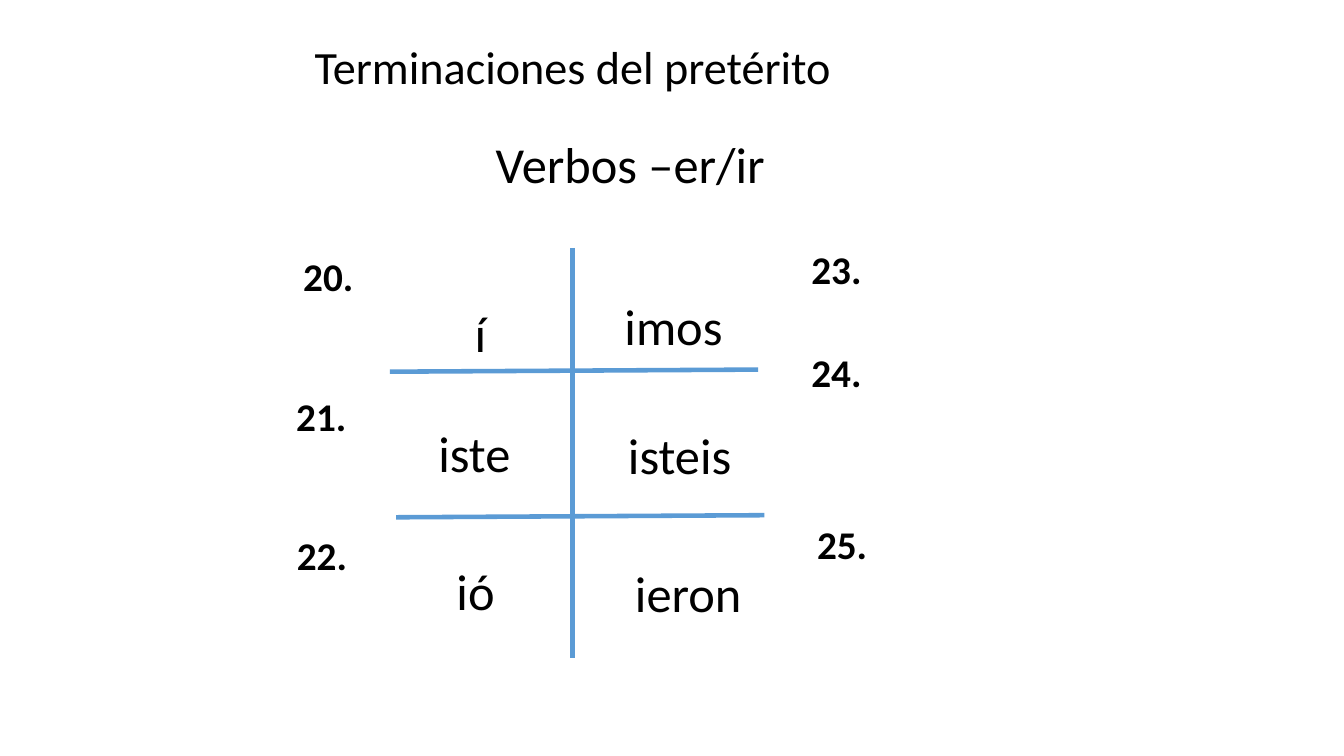
from lxml import etree
from pptx import Presentation
from pptx import util as u
from pptx.dml.color import RGBColor
from pptx.enum import shapes, text
from pptx.oxml import ns

COLOURS = {"text": "000000", "rule": "5B9BD5"}
TITLE = {"size": u.Pt(33), "bold": False}
ENDING = {"size": u.Pt(36), "bold": False}
NUMBER = {"size": u.Pt(28), "bold": True}

RULES = [
    (409, 177, 409, 470, 3),
    (278.5, 265.5, 541.5, 264, 3.25),
    (283, 369.5, 546, 368, 3.25),
]
ENDINGS = [
    ("Verbos –er/ir", 347, 91.5, 217),
    ("í", 332, 212.5, 23),
    ("iste", 306, 298, 66),
    ("ió", 319, 396.5, 42),
    ("imos", 439, 207.5, 86),
    ("isteis", 441.5, 299.5, 89),
    ("ieron", 446.5, 398, 91.5),
]
NUMBER_PLACES = [
    (209.5, 177), (204.5, 276.5), (205, 376),
    (572.5, 171.5), (572.5, 245.5), (576.5, 368),
]


def write_text(shape, wording, font_format, wrap):
    frame = shape.text_frame
    frame_format = {
        "word_wrap": wrap,
        "auto_size": text.MSO_AUTO_SIZE.SHAPE_TO_FIT_TEXT,
        "vertical_anchor": text.MSO_ANCHOR.TOP,
    }
    for name, value in frame_format.items():
        setattr(frame, name, value)
    paragraph = frame.paragraphs[0]
    paragraph.alignment = text.PP_ALIGN.LEFT
    run = paragraph.add_run()
    run.text = wording
    for name, value in {"name": "Calibri", **font_format}.items():
        setattr(run.font, name, value)
    run.font.color.rgb = RGBColor.from_string(COLOURS["text"])


def add_title(slide, wording, left, top, width, height):
    title = slide.shapes.title
    place = {"left": left, "top": top, "width": width, "height": height}
    for name, value in place.items():
        setattr(title, name, u.Pt(value))
    write_text(title, wording, TITLE, True)
    title.text_frame.paragraphs[0].line_spacing = 1.0


def add_label(slide, wording, left, top, width, height, font_format, wrap):
    box = slide.shapes.add_textbox(u.Pt(left), u.Pt(top), u.Pt(width), u.Pt(height))
    write_text(box, wording, font_format, wrap)


def add_rule(slide, start_x, start_y, end_x, end_y, weight):
    rule = slide.shapes.add_connector(
        shapes.MSO_CONNECTOR.STRAIGHT,
        u.Pt(start_x), u.Pt(start_y), u.Pt(end_x), u.Pt(end_y),
    )
    rule.line.width = u.Pt(weight)
    rule.line.color.rgb = RGBColor.from_string(COLOURS["rule"])
    etree.SubElement(rule._element.spPr, ns.qn("a:effectLst"))


def main():
    presentation = Presentation()
    presentation.slide_width = u.Pt(960)
    presentation.slide_height = u.Pt(540)
    slide = presentation.slides.add_slide(presentation.slide_layouts[5])
    for rule in RULES:
        add_rule(slide, *rule)
    add_title(slide, "Terminaciones del pretérito", 217.5, 24, 537, 47.5)
    for wording, left, top, width in ENDINGS:
        add_label(slide, wording, left, top, width, 51, ENDING, False)
    for number, (left, top) in enumerate(NUMBER_PLACES, start=20):
        add_label(slide, f"{number}.", left, top, 51, 41, NUMBER, True)
    presentation.save("out.pptx")


if __name__ == "__main__":
    main()
